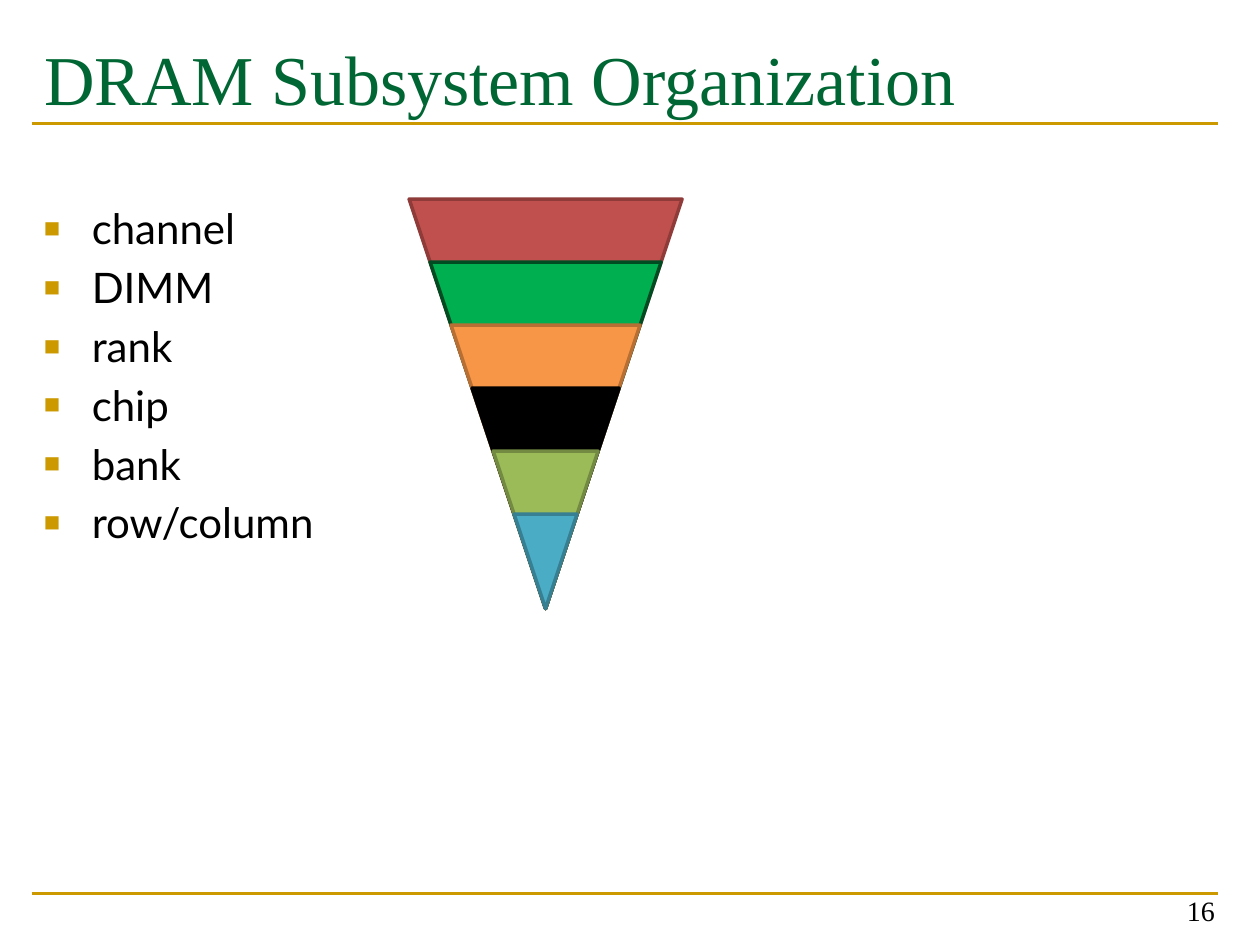
from lxml import etree
from pptx import Presentation, util as u
from pptx.dml.color import RGBColor
from pptx.enum import shapes, text
from pptx.oxml.ns import qn


def tint(code):
    return RGBColor.from_string(code)


def write(box, lines, size, font="Times New Roman", color="000000",
          align="LEFT", anchor="TOP", top=0.05, gap=0, bullet=None):
    frame = box.text_frame
    frame.word_wrap = True
    frame.auto_size = text.MSO_AUTO_SIZE.NONE
    frame.vertical_anchor = text.MSO_ANCHOR[anchor]
    frame.margin_top = u.Inches(top)
    frame.text = "\n".join(lines)
    for row, para in enumerate(frame.paragraphs):
        para.alignment = text.PP_ALIGN[align]
        para.space_before = u.Pt(gap if row else 0)
        face = para.runs[0].font
        face.name, face.size = font, u.Pt(size)
        face.color.rgb = tint(color)
        if bullet:
            props = para._p.get_or_add_pPr()
            props.set("marL", str(u.Inches(0.38)))
            props.set("indent", str(u.Inches(-0.38)))
            shade = etree.SubElement(props, qn("a:buClr"))
            etree.SubElement(shade, qn("a:srgbClr"), val=bullet)
            etree.SubElement(props, qn("a:buSzPct"), val="65000")
            etree.SubElement(props, qn("a:buFont"), typeface="Arial")
            etree.SubElement(props, qn("a:buChar"), char="■")


deck = Presentation()
deck.slide_width, deck.slide_height = u.Inches(10), u.Inches(7.5)
slide = deck.slides.add_slide(deck.slide_layouts[5])
items = slide.shapes
gold = "CC9900"
left, wide = u.Inches(0.25), u.Inches(9.42)

for y in (7.09, 0.98):
    rule = items.add_connector(shapes.MSO_CONNECTOR.STRAIGHT,
                               left, u.Inches(y), left + wide, u.Inches(y))
    rule.line.color.rgb = tint(gold)
    rule.line.width = u.Pt(1.5)
    etree.SubElement(rule._element.spPr, qn("a:effectLst"))

title = items.title
title.left, title.top = left, u.Inches(0.17)
title.width, title.height = wide, u.Inches(1.17)
write(title, ["DRAM Subsystem Organization"], 40, color="006633", top=0.11)

body = items.add_textbox(left, u.Inches(1.09), wide, u.Inches(5.68))
write(body, ["channel", "DIMM", "rank", "chip", "bank", "row/column"], 24,
      font="Lato", top=0.52, gap=4.8, bullet=gold)

page = items.add_textbox(u.Inches(7.41), u.Inches(6.91),
                         u.Inches(2.33), u.Inches(0.5))
write(page, ["16"], 16, align="RIGHT", anchor="BOTTOM")

levels = [("C0504D", "8E3B39"), ("00B050", "004C22"), ("F79646", "B76F34"),
          ("000000", "000000"), ("9BBB59", "738A42"), ("4BACC6", "377F92")]
step = 0.5
for n, (fill, edge) in enumerate(levels):
    tall = 3.25 - n * step
    broad = tall * 2 / 3
    cone = items.add_shape(shapes.MSO_SHAPE.FLOWCHART_MERGE,
                           u.Inches(4.33 - broad / 2), u.Inches(1.58 + n * step),
                           u.Inches(broad), u.Inches(tall))
    cone.shadow.inherit = False
    cone.fill.solid()
    cone.fill.fore_color.rgb = tint(fill)
    cone.line.color.rgb = tint(edge)
    cone.line.width = u.Pt(2)

deck.save("out.pptx")
